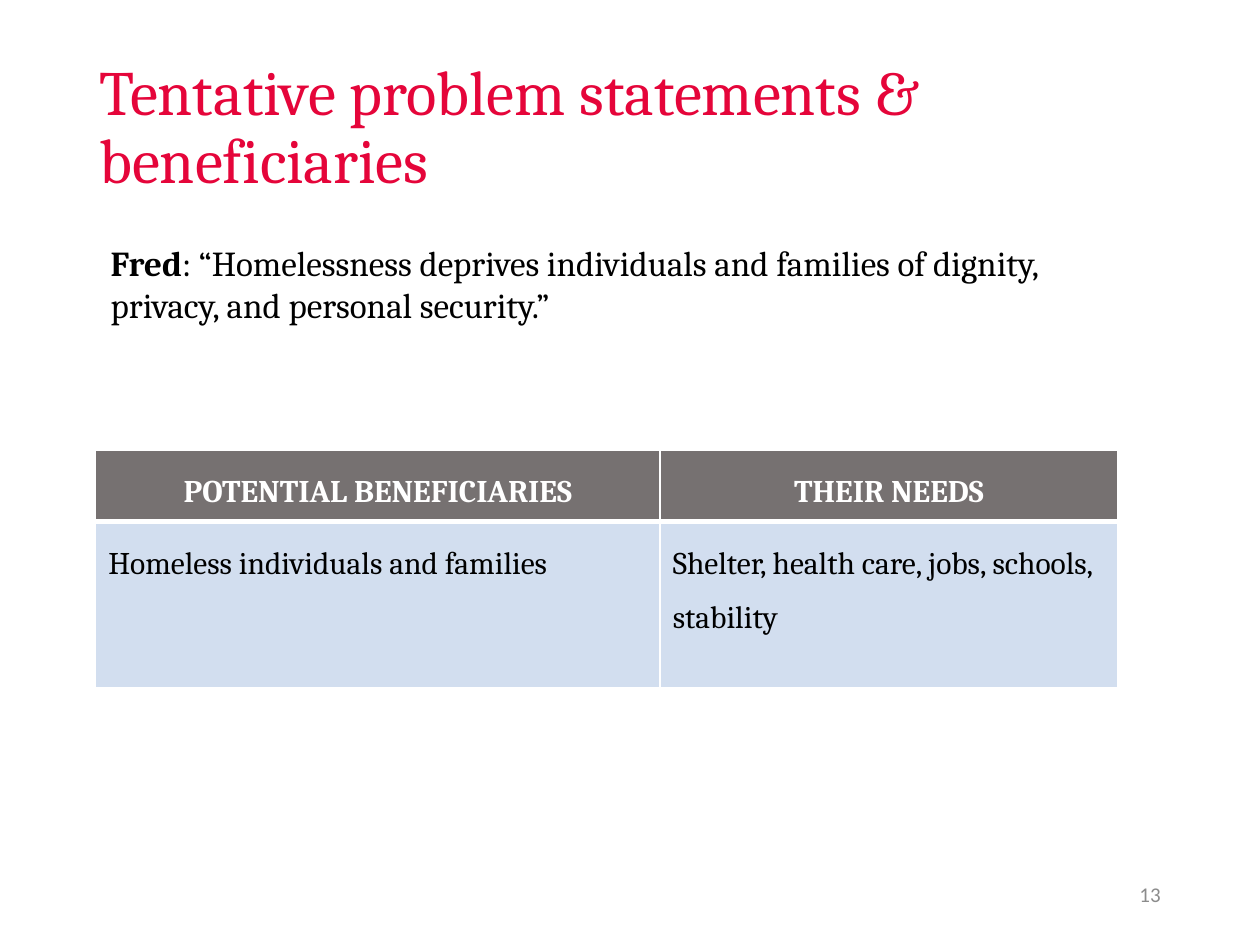
"""Build the slide on tentative problem statements and beneficiaries."""
from dataclasses import dataclass

from lxml import etree
from pptx import Presentation
from pptx import util as u
from pptx.dml.color import RGBColor
from pptx.enum import text
from pptx.oxml.ns import qn


@dataclass(frozen=True)
class Theme:
    serif: str = "Cambria"
    sans: str = "Calibri"
    title: str = "E5053A"
    ink: str = "000000"
    light: str = "FFFFFF"
    muted: str = "8C8C8C"
    header: str = "767171"
    body: str = "D2DEEF"
    title_size: int = 36
    quote_size: int = 20
    table_size: int = 18
    number_size: int = 12


theme = Theme()
prs = Presentation()
prs.slide_width, prs.slide_height = u.Inches(10), u.Inches(7.5)
s = prs.slides.add_slide(prs.slide_layouts[6])


def add_run(p, words, size, color, bold=False, font=theme.serif):
    r = p.add_run()
    r.text = words
    r.font.name, r.font.size, r.font.bold = font, u.Pt(size), bold
    r.font.color.rgb = RGBColor.from_string(color)


def add_box(left, top, width, height, anchor):
    sp = s.shapes.add_textbox(*map(u.Inches, (left, top, width, height)))
    tf = sp.text_frame
    tf.word_wrap = True
    tf.vertical_anchor = anchor
    return tf


tf = add_box(0.69, 0.61, 8.62, 0.83, text.MSO_ANCHOR.MIDDLE)
p = tf.paragraphs[0]
p.line_spacing = 0.9
add_run(p, "Tentative problem statements & beneficiaries", theme.title_size, theme.title)

tf = add_box(7.06, 6.9, 2.25, 0.4, text.MSO_ANCHOR.MIDDLE)
p = tf.paragraphs[0]
p.alignment = text.PP_ALIGN.RIGHT
add_run(p, "13", theme.number_size, theme.muted, font=theme.sans)

tf = add_box(0.78, 1.87, 7.88, 0.77, text.MSO_ANCHOR.TOP)
tf.auto_size = text.MSO_AUTO_SIZE.SHAPE_TO_FIT_TEXT
p = tf.paragraphs[0]
add_run(p, "Fred", theme.quote_size, theme.ink, True)
add_run(
    p,
    ": “Homelessness deprives individuals and families of dignity, privacy, and personal security.”",
    theme.quote_size,
    theme.ink,
)

rows = [
    ("POTENTIAL BENEFICIARIES", "THEIR NEEDS"),
    ("Homeless individuals and families", "Shelter, health care, jobs, schools, stability"),
]
col_widths, row_heights = (4.48, 3.63), (0.57, 1.32)
table = s.shapes.add_table(
    len(rows), len(col_widths), u.Inches(0.76), u.Inches(3.57),
    u.Inches(sum(col_widths)), u.Inches(sum(row_heights)),
).table
for col, width in zip(table.columns, col_widths):
    col.width = u.Inches(width)
for row, height in zip(table.rows, row_heights):
    row.height = u.Inches(height)

for i, labels in enumerate(rows):
    is_header = i == 0
    edges = {"lnL": 1, "lnR": 1, "lnT": 1 if is_header else 3, "lnB": 3 if is_header else 1}
    for j, label in enumerate(labels):
        cell = table.cell(i, j)
        tc_pr = cell._tc.get_or_add_tcPr()
        for edge, points in edges.items():
            ln = etree.SubElement(tc_pr, qn(f"a:{edge}"), w=str(u.Pt(points)))
            fill = etree.SubElement(ln, qn("a:solidFill"))
            etree.SubElement(fill, qn("a:srgbClr"), val=theme.light)
        cell.fill.solid()
        cell.fill.fore_color.rgb = RGBColor.from_string(theme.header if is_header else theme.body)
        p = cell.text_frame.paragraphs[0]
        p.alignment = text.PP_ALIGN.CENTER if is_header else text.PP_ALIGN.LEFT
        p.line_spacing = 1.5
        add_run(p, label, theme.table_size, theme.light if is_header else theme.ink, is_header)

prs.save("out.pptx")
